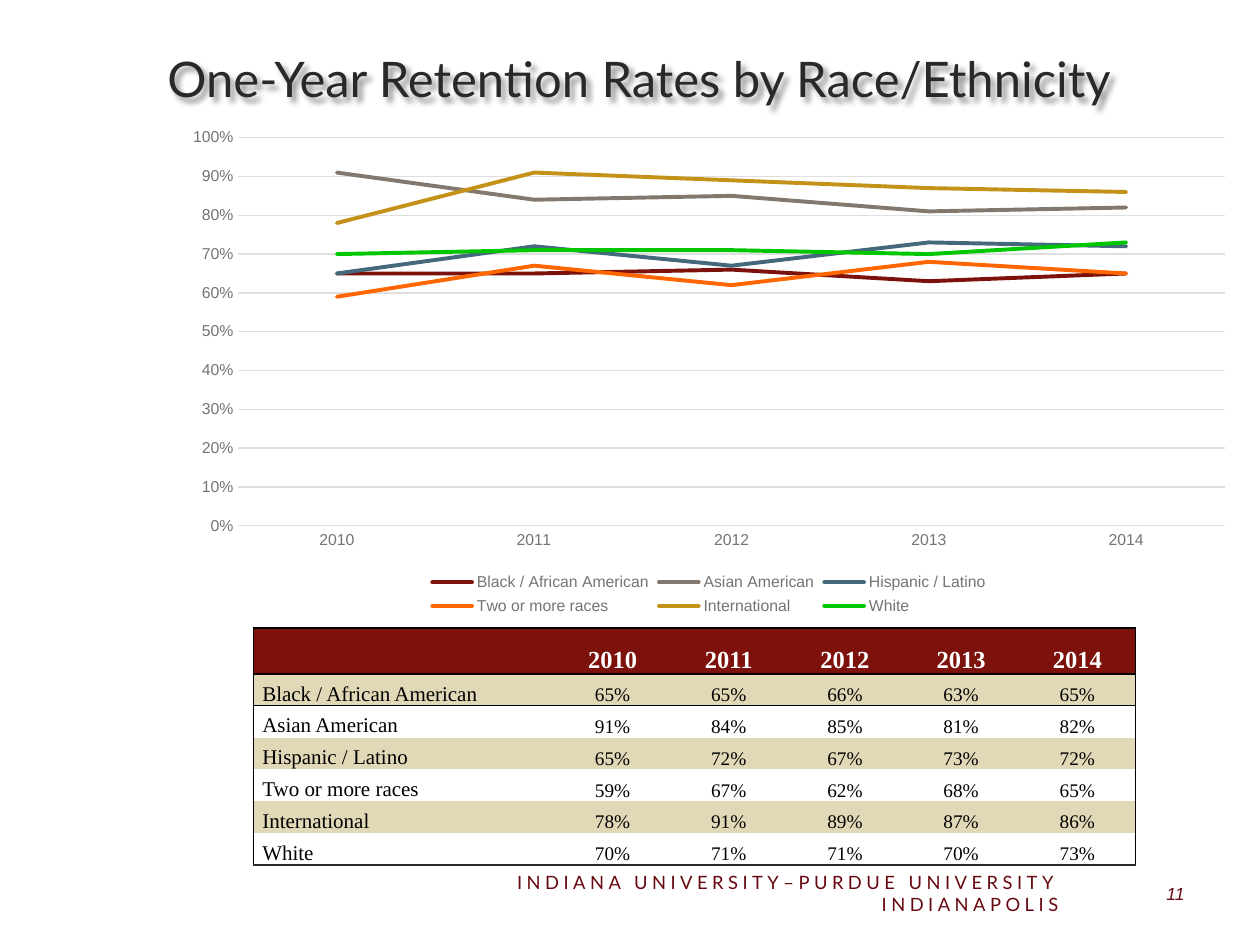
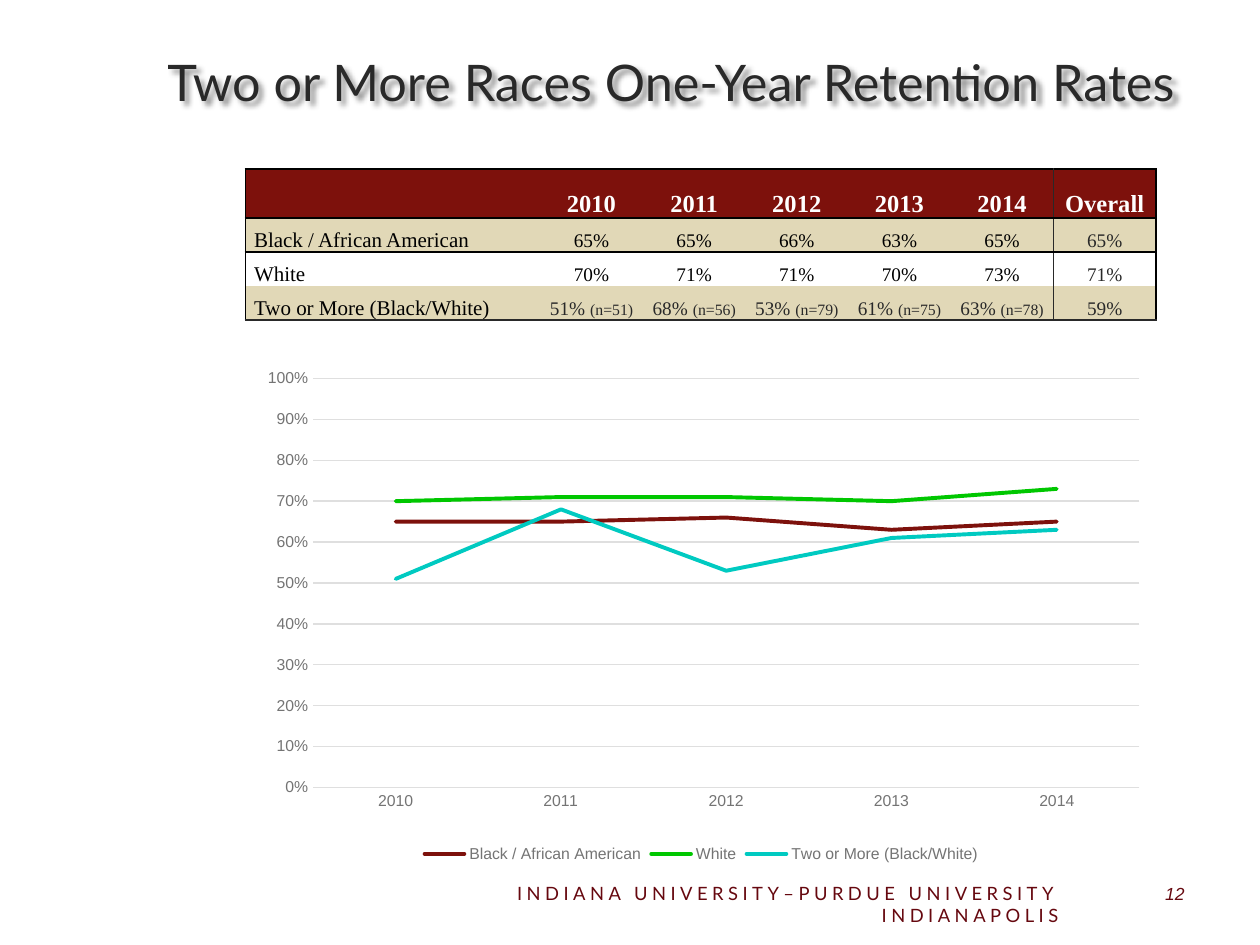
from lxml import etree
from pptx import Presentation
from pptx.chart.data import CategoryChartData
from pptx.dml.color import RGBColor
from pptx.enum.chart import XL_CHART_TYPE, XL_LEGEND_POSITION, XL_TICK_MARK
from pptx.enum.text import MSO_ANCHOR, MSO_AUTO_SIZE, PP_ALIGN
from pptx.oxml import parse_xml
from pptx.oxml.ns import nsdecls, qn
from pptx.util import Pt

LINE_CHART = XL_CHART_TYPE.LINE
LEGEND_BOTTOM = XL_LEGEND_POSITION.BOTTOM
NO_TICK = XL_TICK_MARK.NONE
MIDDLE, BOTTOM = MSO_ANCHOR.MIDDLE, MSO_ANCHOR.BOTTOM
LEFT, CENTER, RIGHT = PP_ALIGN.LEFT, PP_ALIGN.CENTER, PP_ALIGN.RIGHT
NO_AUTOFIT = MSO_AUTO_SIZE.NONE

COLORS = {
    "ink": "292929", "black": "000000", "white": "FFFFFF",
    "crimson": "7D110C", "footer": "66080F", "sand": "E1D8B7",
    "axis_text": "747474", "grid": "DFDFDF",
    "taupe": "82786E", "slate": "44697D", "orange": "FF6600",
    "gold": "C59219", "green": "00C700", "turquoise": "00CAC1",
}
TITLE_FONT, CHART_FONT, TABLE_FONT = "Lato", "Arial", "Times New Roman"
FOOTER = "INDIANA UNIVERSITY–PURDUE UNIVERSITY INDIANAPOLIS"
YEARS = ["2010", "2011", "2012", "2013", "2014"]
NO_STYLE_TABLE = "{2D5ABB26-0587-4C30-8999-92F81FD0307C}"

BLACK_RATES = ("Black / African American", "crimson", [65, 65, 66, 63, 65])
WHITE_RATES = ("White", "green", [70, 71, 71, 70, 73])

# Boxes are left, top, width, height in points
SLIDES = [
    {
        "title": "One-Year Retention Rates by Race/Ethnicity",
        "title_size": 28, "title_box": (88.5, 21.6, 624.5, 46),
        "number": "11", "footer_box": (247.7, 496, 364.3, 29),
        "table_box": (144.9, 358.8, 504, 135.5),
        "columns": [172] + [66.4] * 5, "rows": [26.3] + [18.2] * 6,
        "chart_box": (98, 67.7, 614.2, 286.6), "plot": None,
        "series": [
            BLACK_RATES,
            ("Asian American", "taupe", [91, 84, 85, 81, 82]),
            ("Hispanic / Latino", "slate", [65, 72, 67, 73, 72]),
            ("Two or more races", "orange", [59, 67, 62, 68, 65]),
            ("International", "gold", [78, 91, 89, 87, 86]),
            WHITE_RATES,
        ],
        "counts": {}, "overall": [],
    },
    {
        "title": "Two or More Races One-Year Retention Rates",
        "title_size": 28.8, "title_box": (88.5, 13, 624.5, 67),
        "number": "12", "footer_box": (257.8, 508.3, 354.2, 16.6),
        "table_box": (140.2, 96.5, 520.5, 86.4),
        "columns": [168.5] + [58.67] * 6, "rows": [28.2] + [19.4] * 3,
        "chart_box": (140.4, 205.2, 520.6, 290.9),
        "plot": {"x": 0.09, "y": 0.04, "w": 0.91, "h": 0.8},
        "series": [
            BLACK_RATES,
            WHITE_RATES,
            ("Two or More (Black/White)", "turquoise", [51, 68, 53, 61, 63]),
        ],
        "counts": {"Two or More (Black/White)": [51, 56, 79, 75, 78]},
        "overall": ["Overall", "65%", "71%", "59%"],
    },
]
SLIDES[1]["plot"] = {"x": 0.074, "y": 0.038, "w": 0.907, "h": 0.804}


def format_font(font, name, size, color, **values):
    font.color.rgb = RGBColor.from_string(COLORS[color])
    for attribute, value in {"name": name, "size": Pt(size), **values}.items():
        setattr(font, attribute, value)


def set_values(target, **values):
    for attribute, value in values.items():
        setattr(target, attribute, value)


presentation = Presentation()
presentation.slide_width, presentation.slide_height = Pt(720), Pt(540)

for content in SLIDES:
    slide = presentation.slides.add_slide(presentation.slide_layouts[5])

    # Title with a soft shadow
    title = slide.shapes.title
    left, top, width, height = map(Pt, content["title_box"])
    set_values(title, left=left, top=top, width=width, height=height)
    set_values(title.text_frame, text=content["title"], word_wrap=True,
               auto_size=NO_AUTOFIT, vertical_anchor=MIDDLE)
    paragraph = title.text_frame.paragraphs[0]
    paragraph.alignment = LEFT
    format_font(paragraph.runs[0].font, TITLE_FONT, content["title_size"], "ink")
    title.element.spPr.append(parse_xml(
        f'<a:effectLst {nsdecls("a")}>'
        '<a:outerShdw blurRad="38100" dist="38100" dir="2700000" algn="tl">'
        '<a:srgbClr val="000000"><a:alpha val="43000"/></a:srgbClr>'
        '</a:outerShdw></a:effectLst>'))

    # Footer and slide number
    for text, box, font_name, size, italic, spacing in [
        (FOOTER, content["footer_box"], TITLE_FONT, 10.5, False, "260"),
        (content["number"], (619.2, 496, 64.8, 29), CHART_FONT, 10, True, "0"),
    ]:
        shape = slide.shapes.add_textbox(*map(Pt, box))
        set_values(shape.text_frame, text=text, word_wrap=True,
                   vertical_anchor=MIDDLE)
        paragraph = shape.text_frame.paragraphs[0]
        paragraph.alignment = RIGHT
        font = paragraph.runs[0].font
        format_font(font, font_name, size, "footer", italic=italic)
        paragraph.runs[0]._r.get_or_add_rPr().set("spc", spacing)

    # Chart
    chart_data = CategoryChartData(number_format="0%")
    chart_data.categories = YEARS
    for name, color, rates in content["series"]:
        chart_data.add_series(name, [rate / 100 for rate in rates])
    chart = slide.shapes.add_chart(
        LINE_CHART, *map(Pt, content["chart_box"]), chart_data).chart
    format_font(chart.font, CHART_FONT, 10, "ink")
    set_values(chart, has_title=False, has_legend=True)
    set_values(chart.legend, position=LEGEND_BOTTOM, include_in_layout=False)
    format_font(chart.legend.font, CHART_FONT, 9, "axis_text")
    chart.plots[0].vary_by_categories = False

    for axis in (chart.category_axis, chart.value_axis):
        set_values(axis, major_tick_mark=NO_TICK, minor_tick_mark=NO_TICK)
        format_font(axis.tick_labels.font, CHART_FONT, 9, "axis_text")
    set_values(chart.value_axis, minimum_scale=0, maximum_scale=1,
               major_unit=0.1, has_major_gridlines=True)
    set_values(chart.value_axis.tick_labels, number_format="0%",
               number_format_is_linked=False)
    chart.value_axis.format.line.fill.background()
    for line in (chart.category_axis.format.line,
                 chart.value_axis.major_gridlines.format.line):
        line.color.rgb = RGBColor.from_string(COLORS["grid"])
        line.width = Pt(0.75)

    for series, (name, color, rates) in zip(chart.plots[0].series, content["series"]):
        series.smooth = False
        series.format.line.color.rgb = RGBColor.from_string(COLORS[color])
        series.format.line.width = Pt(2.25)
    for line in chart.element.xpath(".//c:ser/c:spPr/a:ln"):
        line.set("cap", "rnd")

    if content["plot"]:
        plot_area = chart.element.xpath("c:chart/c:plotArea")[0]
        for layout in plot_area.xpath("c:layout"):
            plot_area.remove(layout)
        settings = {"layoutTarget": "inner", "xMode": "edge", "yMode": "edge",
                    **content["plot"]}
        layout = etree.Element(qn("c:layout"))
        manual = etree.SubElement(layout, qn("c:manualLayout"))
        for tag, value in settings.items():
            etree.SubElement(manual, qn(f"c:{tag}")).set("val", str(value))
        plot_area.insert(0, layout)

    # Table text: one row per series, optional counts and overall column
    table_rows = [[""] + YEARS]
    for name, color, rates in content["series"]:
        cells = [f"{rate}%" for rate in rates]
        if name in content["counts"]:
            cells = [f"{cell} (n={count})"
                     for cell, count in zip(cells, content["counts"][name])]
        table_rows.append([name] + cells)
    for row, overall in zip(table_rows, content["overall"]):
        row.append(overall)

    last_row, last_column = len(table_rows) - 1, len(table_rows[0]) - 1
    table = slide.shapes.add_table(
        last_row + 1, last_column + 1, *map(Pt, content["table_box"])).table
    set_values(table, first_row=False, horz_banding=False)
    table._tbl.tblPr.find(qn("a:tableStyleId")).text = NO_STYLE_TABLE
    for column, width in zip(table.columns, content["columns"]):
        column.width = Pt(width)
    for row, height in zip(table.rows, content["rows"]):
        row.height = Pt(height)

    for row_index, row in enumerate(table_rows):
        for column_index, text in enumerate(row):
            cell = table.cell(row_index, column_index)
            is_header, is_label = row_index == 0, column_index == 0
            is_overall = bool(content["overall"]) and column_index == last_column
            set_values(cell, vertical_anchor=BOTTOM, margin_left=Pt(5),
                       margin_right=Pt(5), margin_top=0, margin_bottom=0)
            fill = "crimson" if is_header else "sand" if row_index % 2 else "white"
            cell.fill.solid()
            cell.fill.fore_color.rgb = RGBColor.from_string(COLORS[fill])

            paragraph = cell.text_frame.paragraphs[0]
            set_values(paragraph, line_spacing=1.07,
                       alignment=LEFT if is_label else CENTER)
            rate, bracket, count = text.partition("(n")
            if is_label:
                rate, bracket, count = text, "", ""
            size = 14 if is_header else 12 if is_label else 11
            color = ("white" if is_header else
                     "ink" if is_overall or count else "black")
            for part, part_size in ((rate, size), (bracket + count, 9)):
                if part:
                    run = paragraph.add_run()
                    run.text = part
                    format_font(run.font, TABLE_FONT, part_size, color,
                                bold=is_header)

            # Outer frame, header rule and overall divider
            borders = {
                "lnL": "black" if is_label else "ink" if is_overall else None,
                "lnR": "black" if column_index == last_column else
                       "ink" if content["overall"]
                       and column_index == last_column - 1 else None,
                "lnT": "black" if row_index < 2 else None,
                "lnB": "black" if is_header else
                       "ink" if row_index == last_row else None,
            }
            drawn = [(tag, color) for tag, color in borders.items() if color]
            for position, (tag, color) in enumerate(drawn):
                cell._tc.get_or_add_tcPr().insert(position, parse_xml(
                    f'<a:{tag} {nsdecls("a")} w="12700"><a:solidFill>'
                    f'<a:srgbClr val="{COLORS[color]}"/></a:solidFill></a:{tag}>'))

presentation.save("out.pptx")
